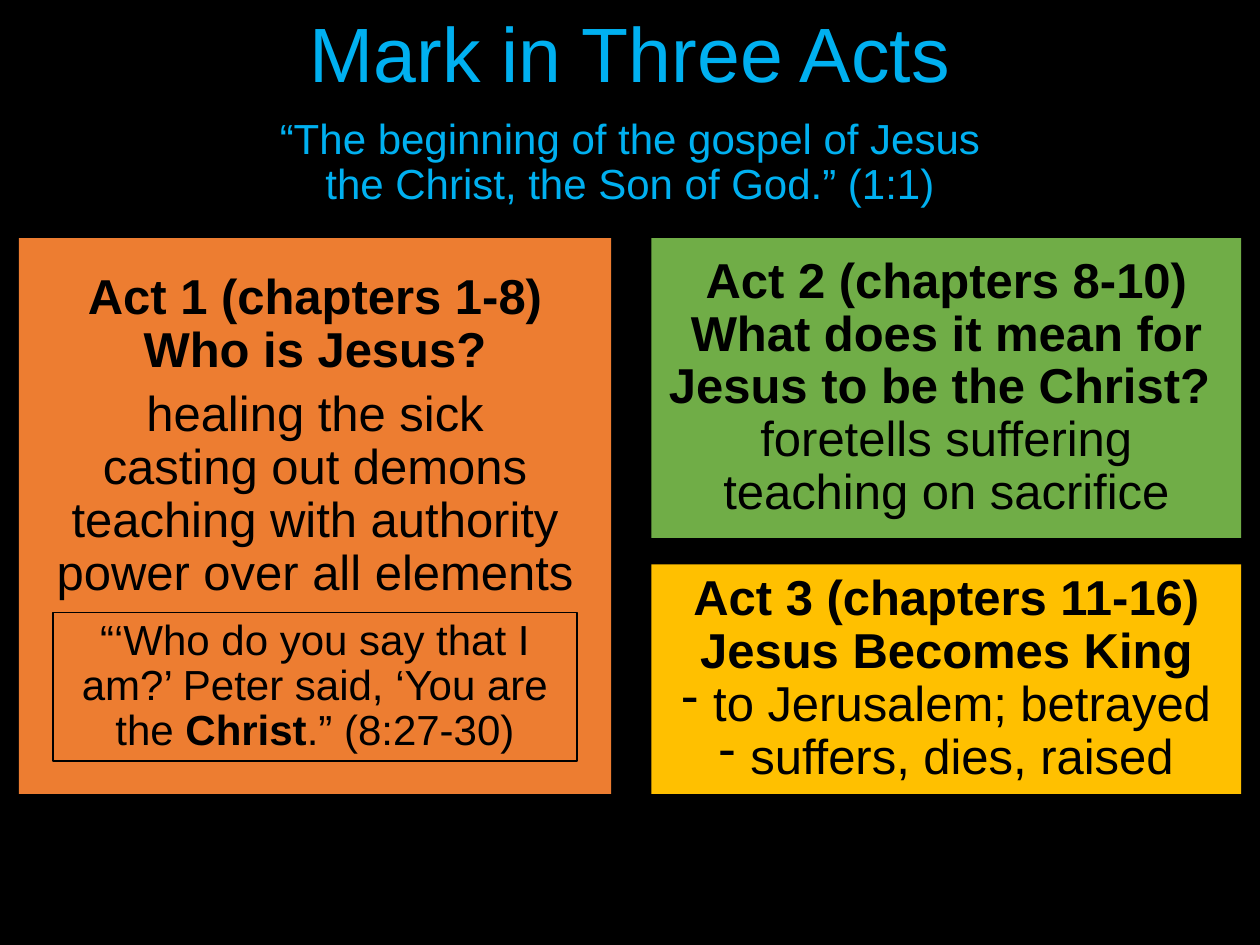
from lxml.etree import SubElement
from pptx import Presentation
from pptx.dml.color import RGBColor as RGB
from pptx.enum.shapes import MSO_SHAPE as Kind
from pptx.enum.text import MSO_ANCHOR as Anchor, PP_ALIGN as Align
from pptx.oxml.ns import qn
from pptx.util import Inches, Pt

BLACK = RGB(0, 0, 0)
BLUE = RGB(0, 176, 240)
ORANGE = RGB(237, 125, 49)
GREEN = RGB(112, 173, 71)
GOLD = RGB(255, 192, 0)

TITLE = "Mark in Three Acts"
VERSE = "“The beginning of the gospel of Jesus the Christ, the Son of God.” (1:1)"
QUOTE = [("“‘Who do you say that I am?’ Peter said, ‘You are the ", False),
         ("Christ", True), (".” (8:27-30)", False)]
ACTS = [
    dict(head="Act 1 (chapters 1-8) Who is Jesus?",
         points=["healing the sick", "casting out demons",
                 "teaching with authority", "power over all elements"],
         fill=ORANGE, col=0, row=0, span=2, gap=6, foot=1.31),
    dict(head="Act 2 (chapters 8-10) What does it mean for Jesus to be the Christ? ",
         points=["foretells suffering", "teaching on sacrifice"],
         fill=GREEN, col=1, row=0),
    dict(head="Act 3 (chapters 11-16) Jesus Becomes King",
         points=["to Jerusalem; betrayed", "suffers, dies, raised"],
         fill=GOLD, col=1, row=1, dash=True),
]

WIDE, HIGH = 10, 7.5
EDGE, TOP = 0.15, 1.89
COLS, ROWS = (4.7, 4.68), (2.38, 1.82)
GUTTER, GAP = WIDE - 2 * EDGE - sum(COLS), 0.21
INSET = 0.27


def cell(col, row, span=1):
    left = EDGE + sum(COLS[:col]) + col * GUTTER
    top = TOP + sum(ROWS[:row]) + row * GAP
    tall = sum(ROWS[row:row + span]) + (span - 1) * GAP
    return left, top, COLS[col], tall


def frame(shape):
    body = shape.text_frame
    body.word_wrap = True
    body.vertical_anchor = Anchor.MIDDLE
    return body


def label(area):
    return frame(slide.shapes.add_textbox(*map(Inches, area)))


def panel(area, fill=None):
    shape = slide.shapes.add_shape(Kind.RECTANGLE, *map(Inches, area))
    shape.shadow.inherit = False
    if fill is None:
        shape.fill.background()
        shape.line.color.rgb = BLACK
        shape.line.width = Pt(0.75)
    else:
        shape.fill.solid()
        shape.fill.fore_color.rgb = fill
        shape.line.fill.background()
    return frame(shape)


def style(para, size, color=BLACK, bold=None):
    para.alignment = Align.CENTER
    para.line_spacing = 0.9
    font = para.font
    font.name, font.size, font.bold = "Arial", Pt(size), bold
    font.color.rgb = color


def bullet(para):
    props = para._p.get_or_add_pPr()
    props.set("marL", str(Inches(0.25)))
    props.set("indent", str(Inches(-0.25)))
    SubElement(props, qn("a:buChar"), char="-")


def act(head, points, fill, col, row, span=1, gap=0, foot=0.05, dash=False):
    body = panel(cell(col, row, span), fill)
    body.margin_bottom = Inches(foot)
    para = body.paragraphs[0]
    para.text = head
    style(para, 28, bold=True)
    for i, point in enumerate(points):
        para = body.add_paragraph()
        para.text = point
        if dash:
            bullet(para)
        style(para, 28)
        if gap and i == 0:
            para.space_before = Pt(gap)


deck = Presentation()
deck.slide_width, deck.slide_height = Inches(WIDE), Inches(HIGH)
slide = deck.slides.add_slide(deck.slide_layouts[6])
slide.background.fill.solid()
slide.background.fill.fore_color.rgb = BLACK

for text, top, wide, tall, size in ((TITLE, 0.07, 8.62, 0.77, 44),
                                    (VERSE, 0.9, 5.98, 0.79, 24)):
    para = label(((WIDE - wide) / 2, top, wide, tall)).paragraphs[0]
    para.text = text
    style(para, size, BLUE)

for item in ACTS:
    act(**item)

left, top, wide, tall = cell(0, 0, 2)
para = panel((left + INSET, 4.86, wide - 2 * INSET, 1.18)).paragraphs[0]
for text, bold in QUOTE:
    run = para.add_run()
    run.text = text
    if bold:
        run.font.bold = True
style(para, 24)

deck.save("out.pptx")
